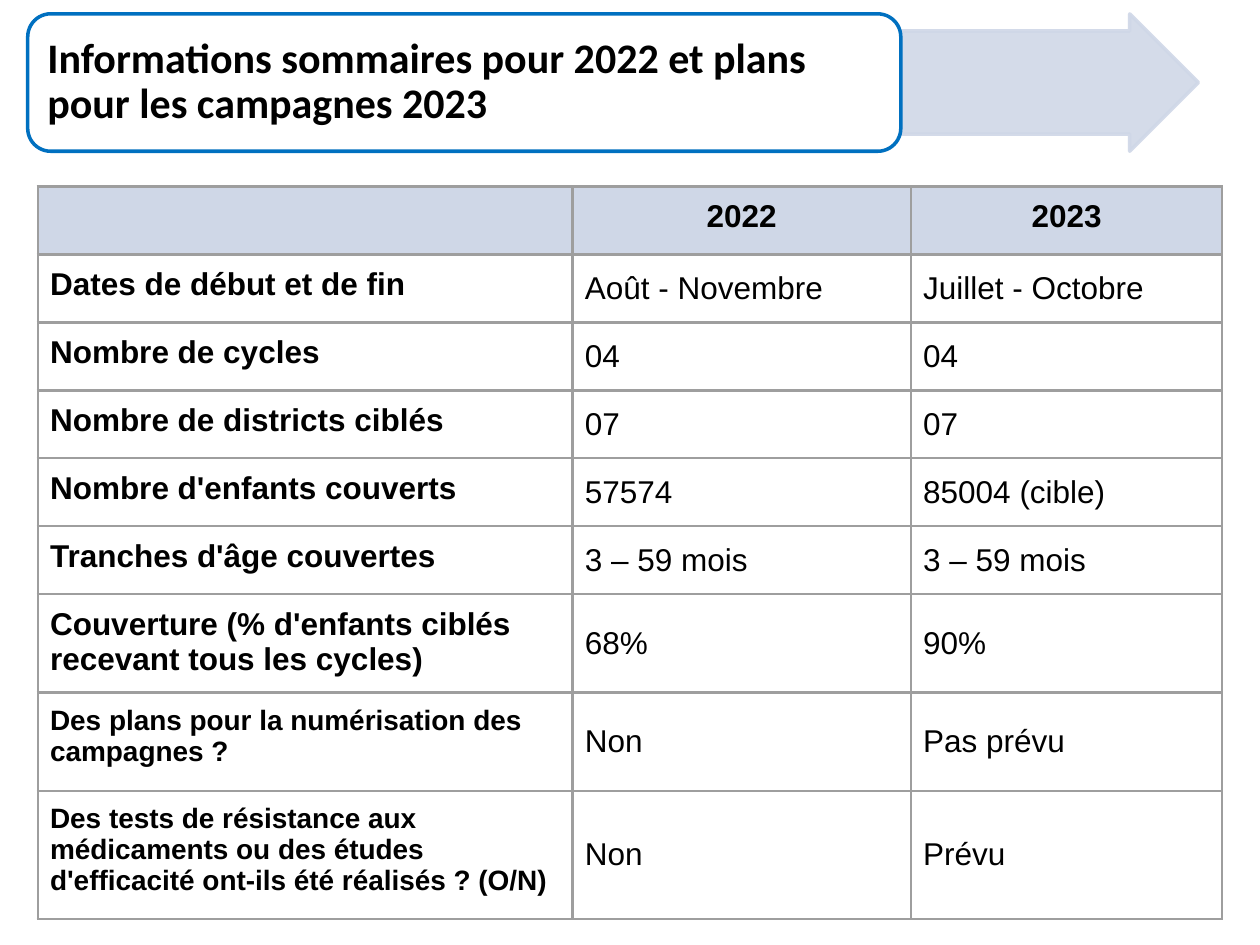
from lxml import etree
from pptx import Presentation
from pptx.dml.color import RGBColor
from pptx.enum.shapes import MSO_SHAPE
from pptx.enum.text import MSO_ANCHOR, MSO_AUTO_SIZE, PP_ALIGN
from pptx.oxml.ns import qn
from pptx.util import Cm, Pt

ARROW, ROUNDED = MSO_SHAPE.RIGHT_ARROW, MSO_SHAPE.ROUNDED_RECTANGLE
TOP, MIDDLE = MSO_ANCHOR.TOP, MSO_ANCHOR.MIDDLE
LEFT, CENTER = PP_ALIGN.LEFT, PP_ALIGN.CENTER
NO_AUTOFIT = MSO_AUTO_SIZE.NONE
TITLE_ONLY = 5

COLORS = {
    "text": "000000",
    "white": "FFFFFF",
    "pale": "CFD7E7",
    "blue": "0070C0",
    "border": "9E9E9E",
}

TITLE = "Informations sommaires pour 2022 et plans pour les campagnes 2023"
ROWS = [
    ("", "2022", "2023"),
    ("Dates de début et de fin", "Août - Novembre", "Juillet - Octobre"),
    ("Nombre de cycles", "04", "04"),
    ("Nombre de districts ciblés", "07", "07"),
    ("Nombre d'enfants couverts", "57574", "85004 (cible)"),
    ("Tranches d'âge couvertes", "3 – 59 mois", "3 – 59 mois"),
    ("Couverture (% d'enfants ciblés recevant tous les cycles)", "68%", "90%"),
    ("Des plans pour la numérisation des campagnes ?", "Non", "Pas prévu"),
    ("Des tests de résistance aux médicaments ou des études d'efficacité "
     "ont-ils été réalisés ? (O/N)", "Non", "Prévu"),
]
COL_WIDTHS = [10.78, 6.82, 6.28]
ROW_HEIGHTS = [1.37] * 6 + [1.98] * 2 + [2.59]
SMALL_LABEL_ROWS = (7, 8)


def rgb(name):
    return RGBColor.from_string(COLORS[name])


def set_attrs(obj, values):
    for name, value in values.items():
        setattr(obj, name, value)


class SlideBuilder:
    """Holds the style and the slide being built."""

    line_width = Pt(2)
    border_width = Pt(1.5)
    title_font = {"name": "Calibri", "size": Pt(24), "bold": True}
    cell_font = {"name": "Arial", "size": Pt(18)}
    cell_margins = {f"margin_{side}": Cm(0.25)
                    for side in ("left", "right", "top", "bottom")}

    def __init__(self, slide):
        self.s = slide

    def text(self, tf, text, font, align=LEFT):
        p = tf.paragraphs[0]
        p.alignment = align
        if text:
            r = p.add_run()
            r.text = text
            set_attrs(r.font, font)
            r.font.color.rgb = rgb("text")
        return p

    def shape(self, kind, box, fill, line, adjustments, alpha=None):
        sp = self.s.shapes.add_shape(kind, *map(Cm, box))
        sp.shadow.inherit = False
        for i, value in enumerate(adjustments):
            sp.adjustments[i] = value
        sp.fill.solid()
        sp.fill.fore_color.rgb = rgb(fill)
        sp.line.color.rgb = rgb(line)
        sp.line.width = self.line_width
        if alpha:
            for color in sp.element.spPr.iter(qn("a:srgbClr")):
                etree.SubElement(color, qn("a:alpha"), val=str(alpha * 1000))

    def title(self, text, box):
        sp = self.s.shapes.title
        left, top, width, height = map(Cm, box)
        set_attrs(sp, {"left": left, "top": top,
                       "width": width, "height": height})
        self.s.shapes.element.append(sp.element)  # in front of its frame
        tf = sp.text_frame
        set_attrs(tf, {"word_wrap": True, "auto_size": NO_AUTOFIT,
                       "vertical_anchor": MIDDLE})
        self.text(tf, text, self.title_font).line_spacing = 0.9

    def borders(self, cell):
        tc_pr = cell._tc.get_or_add_tcPr()
        for side in "LRTB":
            ln = etree.SubElement(tc_pr, qn(f"a:ln{side}"),
                                  w=str(self.border_width))
            fill = etree.SubElement(ln, qn("a:solidFill"))
            etree.SubElement(fill, qn("a:srgbClr"), val=COLORS["border"])

    def cell(self, cell, text, row, col):
        header, label = row == 0, col == 0
        set_attrs(cell, self.cell_margins)
        cell.vertical_anchor = TOP if header or label else MIDDLE
        self.borders(cell)
        if header:
            cell.fill.solid()
            cell.fill.fore_color.rgb = rgb("pale")
        else:
            cell.fill.background()
        font = {**self.cell_font, "bold": header or label}
        if label and row in SMALL_LABEL_ROWS:
            font["size"] = Pt(16)
        self.text(cell.text_frame, text, font, CENTER if header else LEFT)

    def table(self, rows, left, top, widths, heights):
        box = (left, top, sum(widths), sum(heights))
        table = self.s.shapes.add_table(
            len(rows), len(widths), *map(Cm, box)).table
        table.horz_banding = False
        for column, width in zip(table.columns, widths):
            column.width = Cm(width)
        for row, height in zip(table.rows, heights):
            row.height = Cm(height)
        for i, values in enumerate(rows):
            for j, value in enumerate(values):
                self.cell(table.cell(i, j), value, i, j)


def main():
    prs = Presentation()
    prs.slide_width, prs.slide_height = Cm(25.4), Cm(19.05)
    b = SlideBuilder(prs.slides.add_slide(prs.slide_layouts[TITLE_ONLY]))
    b.shape(ARROW, (18.16, 0.28, 6, 2.77), "pale", "pale", (0.75, 0.5), alpha=89)
    b.shape(ROUNDED, (0.56, 0.28, 17.6, 2.77), "white", "blue", (0.167,))
    b.title(TITLE, (0.7, 0.41, 17.32, 2.5))
    b.table(ROWS, 0.76, 3.76, COL_WIDTHS, ROW_HEIGHTS)
    prs.save("out.pptx")


if __name__ == "__main__":
    main()
